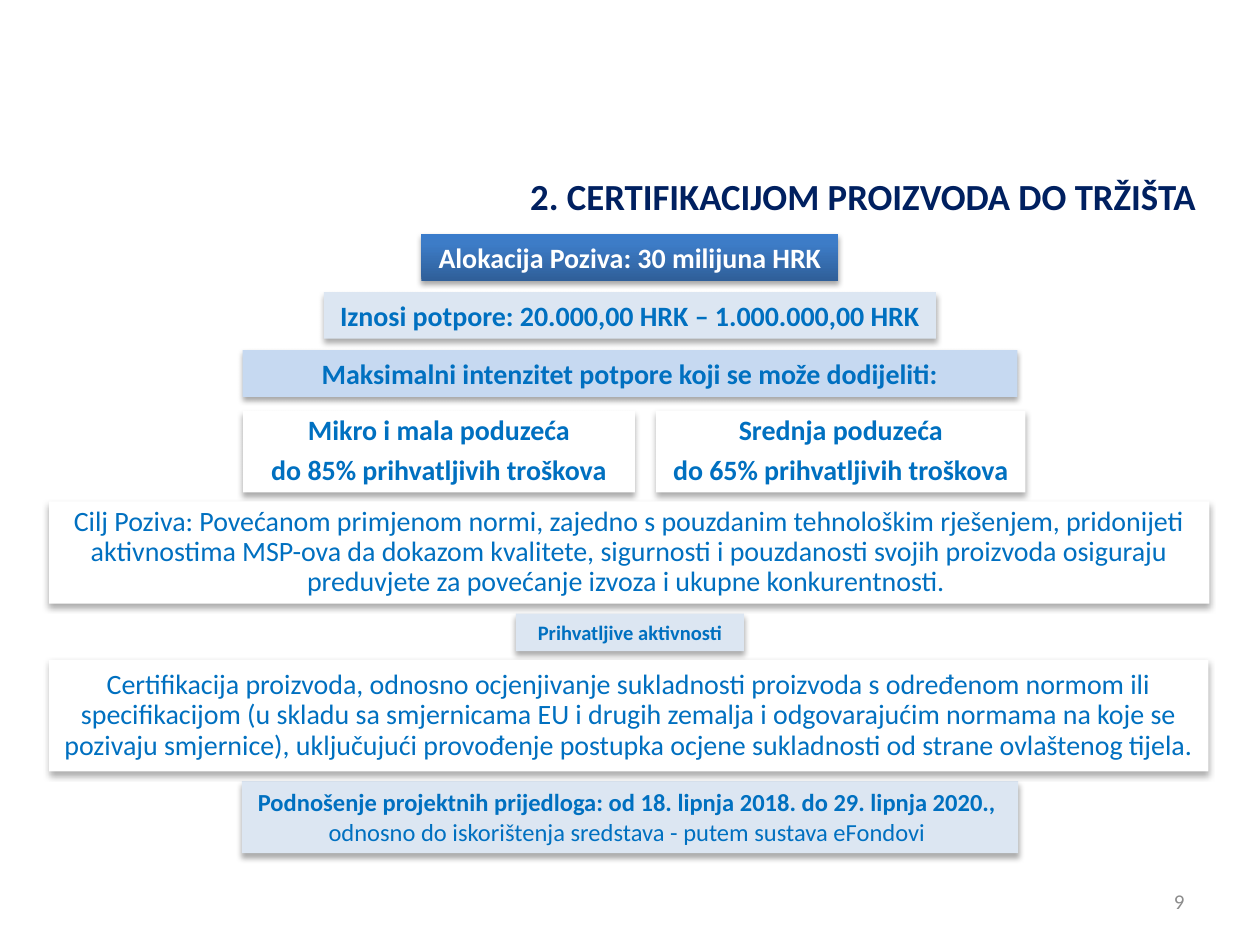
"""Build the slide on the product certification call."""
import copy

import pptx
import pptx.dml.color
import pptx.enum.shapes
import pptx.enum.text
import pptx.oxml.ns
import pptx.util
from lxml import etree

Cm, Pt = pptx.util.Cm, pptx.util.Pt
RGBColor = pptx.dml.color.RGBColor
ALIGN = pptx.enum.text.PP_ALIGN
ANCHOR = pptx.enum.text.MSO_ANCHOR
AUTO = pptx.enum.text.MSO_AUTO_SIZE
qn = pptx.oxml.ns.qn

WHITE = RGBColor(0xFF, 0xFF, 0xFF)
BLUE = RGBColor(0x00, 0x70, 0xC0)
NAVY = RGBColor(0x00, 0x20, 0x60)
GRAY = RGBColor(0x8C, 0x8C, 0x8C)
PALE = RGBColor(0xDC, 0xE6, 0xF2)
LIGHT = RGBColor(0xC6, 0xD9, 0xF1)
GRADIENT = [(0, RGBColor(0x2F, 0x5F, 0x99)), (0.8, RGBColor(0x3D, 0x7C, 0xC7)),
            (1, RGBColor(0x3A, 0x7C, 0xCB))]
DEEP, SOFT = (32, 3.5, 2.2), (35, 3.1, 1.8)
WIDTH, HEIGHT = 25.4, 19.05

TITLE = "2. CERTIFIKACIJOM PROIZVODA DO TRŽIŠTA"
GOAL = ("Cilj Poziva: Povećanom primjenom normi, zajedno s pouzdanim tehnološkim rješenjem, "
        "pridonijeti aktivnostima MSP-ova da dokazom kvalitete, sigurnosti i pouzdanosti svojih "
        "proizvoda osiguraju preduvjete za povećanje izvoza i ukupne konkurentnosti. ")
ACTIVITY = ("Certifikacija proizvoda, odnosno ocjenjivanje sukladnosti proizvoda s određenom normom "
            "ili specifikacijom (u skladu sa smjernicama EU i drugih zemalja i odgovarajućim normama "
            "na koje se pozivaju smjernice), uključujući provođenje postupka ocjene sukladnosti od "
            "strane ovlaštenog tijela.")
LABELS = [
    (4.72, 8.41, 0.94, GRADIENT, SOFT, 16, WHITE, [("Alokacija Poziva: 30 milijuna HRK", True)]),
    (5.89, 12.34, 0.94, PALE, DEEP, 16, BLUE,
     [("Iznosi potpore: 20.000,00 HRK – 1.000.000,00 HRK", True)]),
    (7.06, 15.62, 0.94, LIGHT, SOFT, 16, BLUE,
     [("Maksimalni intenzitet potpore koji se može dodijeliti:", True)]),
    (12.37, 4.6, 0.76, PALE, DEEP, 11.7, BLUE, [("Prihvatljive aktivnosti", True)]),
    (15.75, 15.65, 1.45, PALE, DEEP, 14, BLUE,
     [("Podnošenje projektnih prijedloga: od 18. lipnja 2018. do 29. lipnja 2020., ", True),
      ("odnosno do iskorištenja sredstava - putem sustava eFondovi ", False)]),
]
PANELS = [
    (4.9, 8.28, 7.9, 1.65, [("Mikro i mala poduzeća", True), ("do 85% prihvatljivih troškova", True)]),
    (13.23, 8.28, 7.44, 1.65, [("Srednja poduzeća", True), ("do 65% prihvatljivih troškova", True)]),
    (0.99, 10.11, 23.39, 2.06, [(GOAL, False)]),
    (0.99, 13.31, 23.37, 2.24, [(ACTIVITY, False)]),
]


def write(sp, lines, size, color, align=ALIGN.CENTER, anchor=ANCHOR.TOP, spacing=None, after=None):
    tf = sp.text_frame
    tf.word_wrap = True
    tf.vertical_anchor = anchor
    tf.auto_size = AUTO.SHAPE_TO_FIT_TEXT if anchor == ANCHOR.TOP else AUTO.NONE
    for i, (text, bold) in enumerate(lines):
        p = tf.paragraphs[0] if i == 0 else tf.add_paragraph()
        p.add_run().text = text
        p.alignment, p.line_spacing, p.space_after = align, spacing, after
        p.font.name, p.font.size, p.font.bold = "Calibri", Pt(size), bold
        p.font.color.rgb = color


def paint(fill, color):
    if isinstance(color, RGBColor):
        fill.solid()
        fill.fore_color.rgb = color
        return
    fill.gradient()
    fill.gradient_angle = 90
    last = fill.gradient_stops[1]._element
    last.addnext(copy.deepcopy(last))
    for stop, (position, rgb) in zip(fill.gradient_stops, color):
        stop.position = position
        stop.color.rgb = rgb


def add_box(s, x, y, w, h, color, shadow):
    sp = s.shapes.add_shape(pptx.enum.shapes.MSO_SHAPE.RECTANGLE, Cm(x), Cm(y), Cm(w), Cm(h))
    paint(sp.fill, color)
    sp.line.fill.background()
    sp.shadow.inherit = False
    alpha, blur, dist = shadow
    effects = sp._element.spPr.find(qn("a:effectLst"))
    outer = etree.SubElement(effects, qn("a:outerShdw"), blurRad=str(Pt(blur)), dist=str(Pt(dist)),
                             dir="5400000", rotWithShape="0")
    black = etree.SubElement(outer, qn("a:srgbClr"), val="000000")
    etree.SubElement(black, qn("a:alpha"), val=str(alpha * 1000))
    return sp


def main():
    prs = pptx.Presentation()
    prs.slide_width, prs.slide_height = Cm(WIDTH), Cm(HEIGHT)
    s = prs.slides.add_slide(prs.slide_layouts[6])
    for y, w, h, color, shadow, size, ink, lines in LABELS:
        write(add_box(s, (WIDTH - w) / 2, y, w, h, color, shadow), lines, size, ink)
    for x, y, w, h, lines in PANELS:
        write(add_box(s, x, y, w, h, WHITE, DEEP), lines, 16, BLUE,
              anchor=ANCHOR.MIDDLE, spacing=0.9, after=Pt(5.6))
    title = s.shapes.add_textbox(Cm(7.57), Cm(3.25), Cm(16.79), Cm(1.3))
    write(title, [(TITLE, True)], 21, NAVY, ALIGN.RIGHT, spacing=1.15)
    number = s.shapes.add_textbox(Cm(18.21), Cm(17.65), Cm(5.92), Cm(1.02))
    write(number, [("9", False)], 12, GRAY, ALIGN.RIGHT, ANCHOR.MIDDLE)
    prs.save("out.pptx")


if __name__ == "__main__":
    main()
